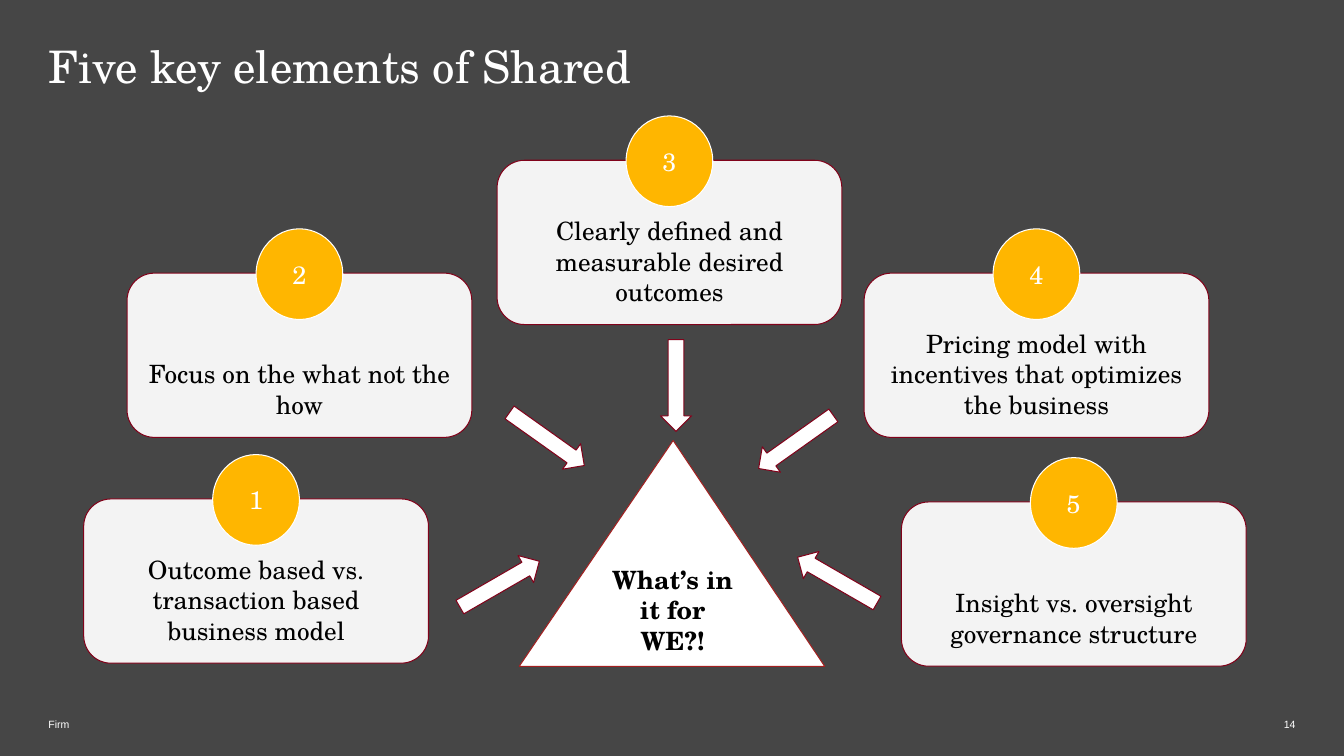
from pptx import Presentation
from pptx.dml.color import RGBColor
from pptx.enum import shapes, text
from pptx.util import Inches, Pt

COLORS = {
    "background": "464646",
    "white": "FFFFFF",
    "black": "000000",
    "card": "F3F3F3",
    "badge": "FFB600",
    "burgundy": "80021A",
    "red": "A32020",
}
SERIF, SANS = "TeX Gyre Schola", "Arial"
CARD_SIZE = (3.42, 1.63)
BADGE_SIZE = (0.86, 0.9)
BADGE_OFFSET = (1.28, -0.44)
ARROW_SIZE = (0.31, 0.91)

# left and top of each card, with its wording
ELEMENTS = [
    (0.83, 4.95, "Outcome based vs. transaction based business model"),
    (1.26, 2.71, "Focus on the what not the how"),
    (4.93, 1.59, "Clearly defined and measurable desired outcomes"),
    (8.57, 2.71, "Pricing model with incentives that optimizes the business"),
    (8.94, 4.98, "Insight vs. oversight governance structure"),
]
# left, top and rotation of each arrow towards the triangle
ARROWS = [
    (6.55, 3.37, 0),
    (5.27, 3.9, 305.4),
    (4.8, 5.34, 240),
    (8.15, 5.3, 120),
    (7.74, 3.93, 54.6),
]


def rgb(name):
    return RGBColor.from_string(COLORS[name])


def write(frame, words, color, size=18, name=SERIF, bold=False, margin=0.1,
          anchor=text.MSO_ANCHOR.MIDDLE, align=text.PP_ALIGN.CENTER, spacing=None):
    """Fill a text frame with one formatted paragraph."""
    margins = {f"margin_{side}": Inches(margin)
               for side in ("left", "top", "right", "bottom")}
    for key, value in {"word_wrap": True, "vertical_anchor": anchor, **margins}.items():
        setattr(frame, key, value)
    paragraph = frame.paragraphs[0]
    paragraph.alignment = align
    paragraph.line_spacing = spacing
    run = paragraph.add_run()
    run.text = words
    for key, value in {"name": name, "size": Pt(size), "bold": bold}.items():
        setattr(run.font, key, value)
    run.font.color.rgb = rgb(color)


def add_label(slide, box, words, **style):
    label = slide.shapes.add_textbox(*map(Inches, box))
    write(label.text_frame, words, "white", margin=0, **style)


def add_outlined(parent, preset, box, fill, line):
    shape = parent.shapes.add_shape(preset, *map(Inches, box))
    shape.shadow.inherit = False
    shape.fill.solid()
    shape.fill.fore_color.rgb = rgb(fill)
    shape.line.color.rgb = rgb(line)
    shape.line.width = Pt(0.75)
    return shape


def add_element(slide, number, left, top, words):
    """Group a card with the numbered badge on its top edge."""
    group = slide.shapes.add_group_shape()
    card = add_outlined(group, shapes.MSO_SHAPE.ROUNDED_RECTANGLE,
                        (left, top, *CARD_SIZE), "card", "burgundy")
    write(card.text_frame, words, "black", anchor=text.MSO_ANCHOR.BOTTOM)
    dx, dy = BADGE_OFFSET
    badge = add_outlined(group, shapes.MSO_SHAPE.OVAL,
                         (left + dx, top + dy, *BADGE_SIZE), "badge", "white")
    write(badge.text_frame, str(number), "white")


def add_triangle(slide):
    triangle = add_outlined(slide, shapes.MSO_SHAPE.ISOSCELES_TRIANGLE,
                            (5.15, 4.37, 3.03, 2.24), "white", "red")
    triangle.adjustments[0] = 0.504
    write(triangle.text_frame, "What’s in it for WE?!", "black", bold=True)


def add_arrow(slide, left, top, rotation):
    arrow = add_outlined(slide, shapes.MSO_SHAPE.DOWN_ARROW,
                         (left, top, *ARROW_SIZE), "white", "burgundy")
    arrow.rotation = rotation


def main():
    deck = Presentation()
    deck.slide_width, deck.slide_height = Inches(13.33), Inches(7.5)
    slide = deck.slides.add_slide(deck.slide_layouts[6])
    slide.background.fill.solid()
    slide.background.fill.fore_color.rgb = rgb("background")

    add_label(slide, (0.48, 0.47, 12.36, 1.52), "Five key elements of Shared", size=32,
              anchor=text.MSO_ANCHOR.TOP, align=text.PP_ALIGN.LEFT, spacing=0.85)
    footer = {"size": 7.5, "name": SANS, "anchor": text.MSO_ANCHOR.BOTTOM}
    add_label(slide, (0.48, 7.1, 5.99, 0.15), "Firm", align=text.PP_ALIGN.LEFT, **footer)
    add_label(slide, (8.99, 7.1, 3.86, 0.15), "14", align=text.PP_ALIGN.RIGHT, **footer)

    add_triangle(slide)
    for number, element in enumerate(ELEMENTS, start=1):
        add_element(slide, number, *element)
    for arrow in ARROWS:
        add_arrow(slide, *arrow)

    deck.save("out.pptx")


if __name__ == "__main__":
    main()
